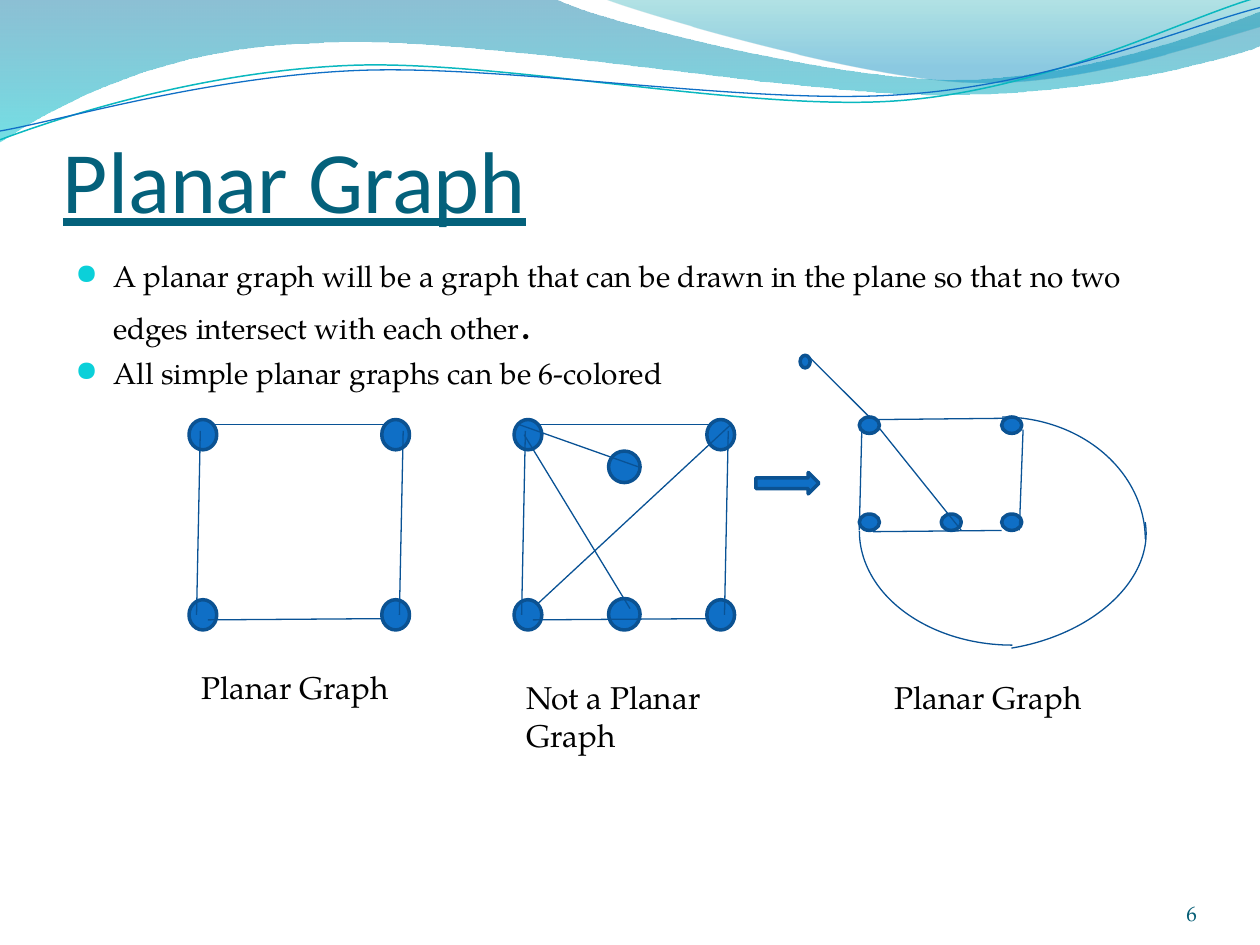
from itertools import product

from lxml.etree import SubElement
from pptx import Presentation
from pptx.dml.color import RGBColor
from pptx.enum.shapes import MSO_CONNECTOR, MSO_SHAPE
from pptx.enum.text import MSO_ANCHOR, PP_ALIGN
from pptx.oxml.ns import qn
from pptx.util import Cm, Pt

COLORS = {
    "node": "0F6FC6", "node_edge": "0B5292", "edge": "095295",
    "title": "04617B", "number": "045D75", "text": "000000", "bullet": "0BD0D9",
    "wave_top": "0074A1", "wave_bottom": "00C6CF",
    "crest_top": "00A1A9", "crest_bottom": "008BBF",
    "teal_line": "0AB8BF", "blue_line": "0F6FC6",
}
SERIF = "TeX Gyre Pagella"


def lengths(*inches):
    return [Cm(2.54 * value) for value in inches]


def rgb(name):
    return RGBColor.from_string(COLORS[name])


class SlideBuilder:
    """Places elements on one page; all positions are in inches."""

    def __init__(self, page):
        self.page = page

    def outline(self, start, pieces, closed):
        """Draw lines (2 numbers) and cubic curves (6 numbers) from a start point."""
        builder = self.page.shapes.build_freeform(*lengths(*start))
        builder.add_line_segments([lengths(*piece[-2:]) for piece in pieces], close=closed)
        shape = builder.convert_to_shape()
        shape.shadow.inherit = False
        track = next(shape.element.spPr.iter(qn("a:path")))
        for segment, piece in zip(list(track)[1:], pieces):
            if len(piece) == 6:
                curve = SubElement(track, qn("a:cubicBezTo"))
                values = lengths(*piece)
                for x, y in zip(values[::2], values[1::2]):
                    SubElement(curve, qn("a:pt"), x=str(x - shape.left), y=str(y - shape.top))
                track.replace(segment, curve)
        return shape

    def wave(self, start, pieces, stops):
        """Closed band with a top-to-bottom gradient of (position, color, opacity)."""
        shape = self.outline(start, pieces, True)
        shape.line.fill.background()
        shape.fill.gradient()
        shape.fill.gradient_angle = 270
        for stop, (position, color, _) in zip(shape.fill.gradient_stops, stops):
            stop.position = position
            stop.color.rgb = rgb(color)
        tints = shape.element.spPr.iter(qn("a:srgbClr"))
        for tint, (_, _, opacity) in zip(tints, stops):
            SubElement(tint, qn("a:alpha"), val=str(opacity * 1000))

    def swoosh(self, start, pieces, color, width):
        shape = self.outline(start, pieces, False)
        shape.fill.background()
        self.stroke(shape, color, width)

    def stroke(self, shape, color, width):
        shape.line.color.rgb = rgb(color)
        shape.line.width = Pt(width)

    def solid(self, kind, left, top, width, height):
        shape = self.page.shapes.add_shape(kind, *lengths(left, top, width, height))
        shape.shadow.inherit = False
        shape.fill.solid()
        shape.fill.fore_color.rgb = rgb("node")
        self.stroke(shape, "node_edge", 2)

    def node(self, left, top, width, height):
        self.solid(MSO_SHAPE.OVAL, left, top, width, height)

    def edge(self, x1, y1, x2, y2):
        line = self.page.shapes.add_connector(
            MSO_CONNECTOR.STRAIGHT, *lengths(x1, y1, x2, y2))
        SubElement(line.element.spPr, qn("a:effectLst"))
        self.stroke(line, "edge", 0.75)

    def arc(self, left, top, width, height, rotation):
        shape = self.page.shapes.add_shape(
            MSO_SHAPE.ARC, *lengths(left, top, width, height))
        shape.shadow.inherit = False
        shape.fill.background()
        shape.rotation = rotation
        self.stroke(shape, "edge", 0.75)

    def text(self, place, words, size, color="text", font=SERIF,
             anchor=MSO_ANCHOR.TOP, margins=None):
        box = self.page.shapes.add_textbox(*lengths(*place))
        frame = box.text_frame
        frame.word_wrap = True
        frame.vertical_anchor = anchor
        if margins:
            (frame.margin_left, frame.margin_top,
             frame.margin_right, frame.margin_bottom) = lengths(*margins)
        frame.text = words
        for para in frame.paragraphs:
            for span in para.runs:
                self.style(span, size, color, font)
        return frame

    def style(self, span, size, color="text", font=SERIF):
        span.font.size = Pt(size)
        span.font.name = font
        span.font.color.rgb = rgb(color)

    def bullet(self, para):
        para.space_before = Pt(3.4)
        props = para._p.get_or_add_pPr()
        indent = lengths(0.3)[0]
        props.set("marL", str(indent))
        props.set("indent", str(-indent))
        tint = SubElement(props, qn("a:buClr"))
        SubElement(tint, qn("a:srgbClr"), val=COLORS["bullet"])
        SubElement(props, qn("a:buSzPct"), val="95000")
        SubElement(props, qn("a:buFont"), typeface="OpenSymbol")
        SubElement(props, qn("a:buChar"), char="●")

    def square_graph(self, left):
        for top, offset in product((4.76, 3.33), (0, 1.53)):
            self.node(left + offset, top, 0.22, 0.24)
        self.edge(left + 0.19, 3.37, left + 1.57, 3.37)
        self.edge(left + 0.15, 4.92, left + 1.53, 4.91)
        for x in (left + 0.06, left + 1.67):
            self.edge(x, 4.88, x + 0.03, 3.42)

    def redrawn_graph(self):
        self.node(6.35, 2.82, 0.08, 0.1)
        for left, top in ((6.82, 4.08), (7.95, 4.08), (6.82, 3.31), (7.95, 3.31), (7.47, 4.08)):
            self.node(left, top, 0.16, 0.13)
        for ends in ((6.42, 2.83, 6.9, 3.31), (6.96, 3.33, 7.98, 3.32),
                     (6.93, 4.22, 7.95, 4.21), (8.09, 4.21, 8.12, 3.41),
                     (6.82, 4.21, 6.84, 3.41), (6.98, 3.4, 7.63, 4.21)):
            self.edge(*ends)
        self.arc(6.82, 3.31, 2.27, 1.94, 0)
        self.arc(6.82, 3.31, 2.43, 1.81, 180)
        self.arc(7.08, 3.13, 1.63, 2.42, 80.7)


def draw_waves(slide):
    slide.wave((0, 0), [
        (4.4, -0.01), (4.76, 0.17, 6.64, 0.63, 7.58, 0.63),
        (8.53, 0.63, 9.58, 0.26, 10, 0.09), (10.01, 0.36),
        (9.83, 0.44, 8.7, 0.76, 7.46, 0.75), (6.22, 0.75, 3.82, 0.28, 2.57, 0.34),
        (1.29, 0.36, 0.46, 0.83, -0.01, 1.13),
    ], [(0, "wave_top", 45), (1, "wave_bottom", 55)])
    slide.wave((4.79, -0.01), [
        (5.09, 0.11, 6.82, 0.62, 7.69, 0.65),
        (8.56, 0.69, 9.61, 0.32, 10, 0.21), (10, 0),
    ], [(0, "crest_top", 30), (0.8, "crest_bottom", 45)])
    slide.swoosh((0, 1.11), [
        (0.48, 0.93, 1.58, 0.57, 2.77, 0.52), (3.95, 0.47, 5.93, 0.89, 7.13, 0.8),
        (8.33, 0.71, 9.38, 0.15, 9.98, -0.02)], "teal_line", 0.85)
    slide.swoosh((0, 1.04), [
        (0.47, 0.96, 1.64, 0.61, 2.83, 0.56), (4.03, 0.51, 5.97, 0.84, 7.17, 0.75),
        (8.36, 0.67, 9.41, 0.21, 10, 0.06)], "blue_line", 0.75)


def draw_text(slide):
    title = slide.text((0.5, 0.58, 9, 1.25), "Planar Graph", 50, "title", "Calibri",
                       MSO_ANCHOR.BOTTOM, (0, 0.05, 0, 0))
    title.paragraphs[0].runs[0].font.underline = True
    body = slide.text(
        (0.5, 2, 8.58, 3.58),
        "A planar graph will be a graph that can be drawn in the plane so that no two "
        "edges intersect with each other\nAll simple planar graphs can be 6-colored", 17)
    for para in body.paragraphs:
        slide.bullet(para)
    full_stop = body.paragraphs[0].add_run()
    full_stop.text = "."
    slide.style(full_stop, 26)
    number = slide.text((8.67, 6.95, 0.83, 0.4), "6", 12, "number",
                        anchor=MSO_ANCHOR.BOTTOM, margins=(0, 0, 0, 0))
    number.paragraphs[0].alignment = PP_ALIGN.RIGHT


def draw_graphs(slide):
    slide.redrawn_graph()
    slide.square_graph(1.5)
    for top in (4.75, 3.58):
        slide.node(4.83, top, 0.25, 0.25)
    slide.square_graph(4.08)
    for ends in ((5.8, 3.37, 4.27, 4.79), (4.12, 3.37, 5.08, 3.71), (4.16, 3.45, 5, 4.83)):
        slide.edge(*ends)
    for left, top, height, words in ((1.5, 5.25, 0.42, "Planar Graph"),
                                     (4.08, 5.33, 0.71, "Not a Planar Graph"),
                                     (7, 5.33, 0.42, "Planar Graph")):
        slide.text((left, top, 1.83, height), words, 18)
    slide.solid(MSO_SHAPE.RIGHT_ARROW, 6, 3.75, 0.5, 0.17)


def main():
    deck = Presentation()
    deck.slide_width, deck.slide_height = lengths(10, 7.5)
    slide = SlideBuilder(deck.slides.add_slide(deck.slide_layouts[6]))
    draw_waves(slide)
    draw_text(slide)
    draw_graphs(slide)
    deck.save("out.pptx")


if __name__ == "__main__":
    main()
